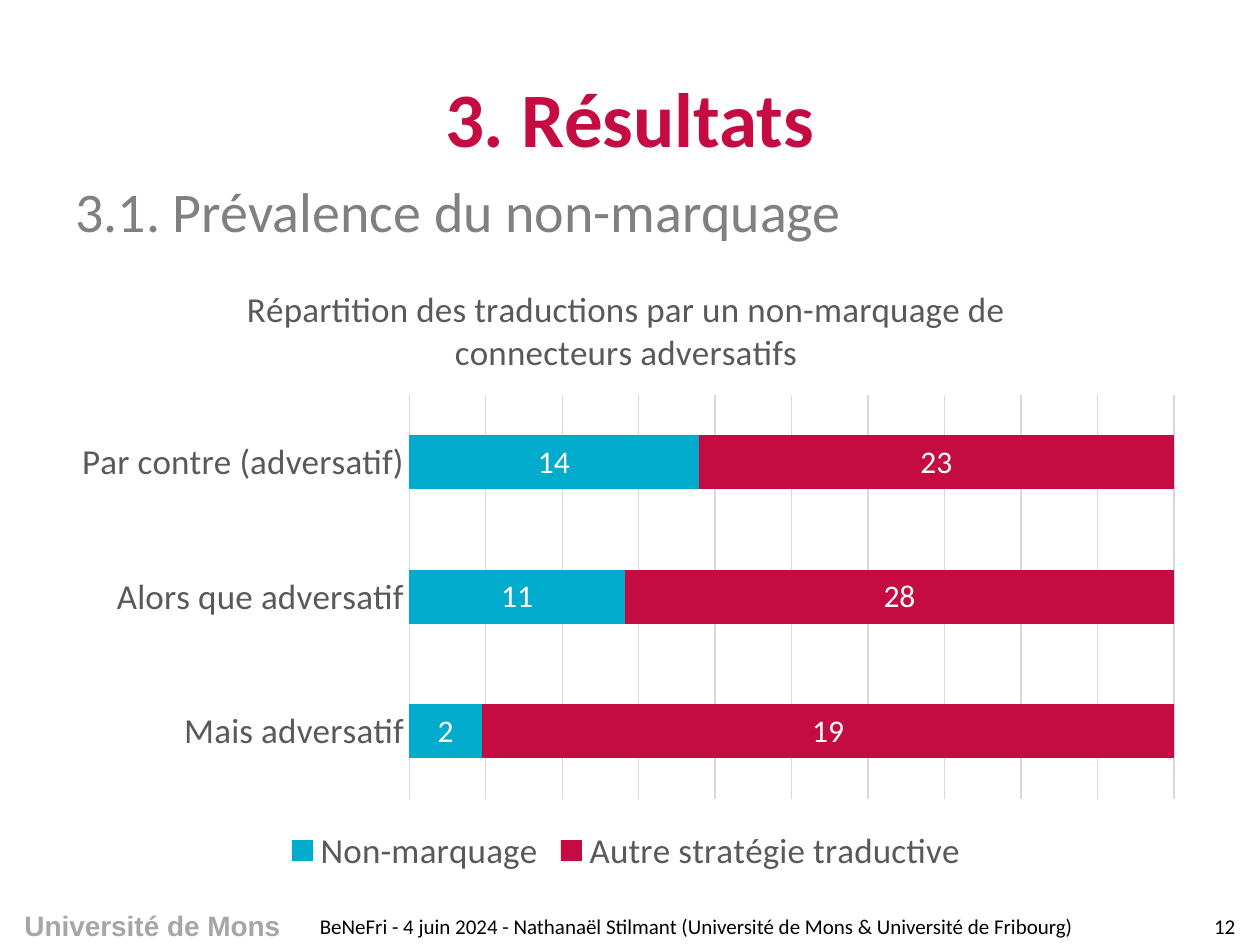
from dataclasses import dataclass

from lxml import etree
from pptx import Presentation
from pptx.chart.data import CategoryChartData
from pptx.dml.color import RGBColor
from pptx.enum import chart as ch, text as tx
from pptx.util import Inches, Pt

COLORS = {
    "crimson": "C40C42", "cyan": "00ABCC", "heading": "808080",
    "brand": "A6A6A6", "label": "595959", "grid": "D9D9D9",
    "black": "000000", "white": "FFFFFF",
}


@dataclass(frozen=True)
class Style:
    size: float
    color: str
    bold: bool = False
    family: str = "Calibri"


@dataclass(frozen=True)
class Label:
    content: str
    box: tuple[float, float, float, float]
    style: Style
    align: tx.PP_ALIGN
    anchor: tx.MSO_ANCHOR = tx.MSO_ANCHOR.MIDDLE


@dataclass(frozen=True)
class Series:
    name: str
    values: tuple[int, ...]
    color: str


FOOTER = Style(12, "black")
CHART_TEXT = Style(20, "label")
TITLE = Label("3. Résultats", (0.5, 0.3, 9, 1.25),
              Style(44, "crimson", bold=True), tx.PP_ALIGN.CENTER)
LABELS = [
    Label("Université de Mons", (-0.01, 7.16, 2.44, 0.37),
          Style(16, "brand", bold=True, family="Arial"),
          tx.PP_ALIGN.CENTER, tx.MSO_ANCHOR.TOP),
    Label("3.1. Prévalence du non-marquage", (0.5, 1.35, 9, 0.65),
          Style(32, "heading"), tx.PP_ALIGN.JUSTIFY, tx.MSO_ANCHOR.TOP),
    Label("12", (9.44, 7.2, 0.56, 0.3), FOOTER, tx.PP_ALIGN.CENTER),
    Label("BeNeFri - 4 juin 2024 - Nathanaël Stilmant "
          "(Université de Mons & Université de Fribourg)",
          (2.44, 7.2, 7, 0.3), FOOTER, tx.PP_ALIGN.LEFT),
]

CHART_BOX = (0.44, 2.05, 9.06, 4.93)
CHART_TITLE = "Répartition des traductions par un non-marquage de connecteurs adversatifs"
CONNECTORS = ("Mais adversatif", "Alors que adversatif", "Par contre (adversatif)")
STRATEGIES = [
    Series("Non-marquage", (2, 11, 14), "cyan"),
    Series("Autre stratégie traductive", (19, 28, 23), "crimson"),
]
# Fractions of the chart area
PLOT_LAYOUT = {"x": 0.31, "y": 0.22, "w": 0.67, "h": 0.65}


def rgb(name: str) -> RGBColor:
    return RGBColor.from_string(COLORS[name])


def apply_font(font, style: Style) -> None:
    font.name = style.family
    font.size = Pt(style.size)
    font.bold = style.bold
    font.color.rgb = rgb(style.color)


def fill_label(shape, label: Label) -> None:
    """Place a text shape and write its single run."""
    shape.left, shape.top, shape.width, shape.height = map(Inches, label.box)
    frame = shape.text_frame
    frame.word_wrap = True
    frame.auto_size = tx.MSO_AUTO_SIZE.NONE
    frame.vertical_anchor = label.anchor
    paragraph = frame.paragraphs[0]
    paragraph.alignment = label.align
    run = paragraph.add_run()
    run.text = label.content
    apply_font(run.font, label.style)


def set_plot_layout(chart) -> None:
    """Fix the inner plot area by fractions of the chart area."""
    area = chart._chartSpace.chart.plotArea
    namespace = "{%s}" % area.nsmap["c"]
    for old in area.findall(namespace + "layout"):
        area.remove(old)
    layout = etree.Element(namespace + "layout")
    manual = etree.SubElement(layout, namespace + "manualLayout")
    settings = {"layoutTarget": "inner", "xMode": "edge", "yMode": "edge", **PLOT_LAYOUT}
    for tag, value in settings.items():
        etree.SubElement(manual, namespace + tag).set("val", str(value))
    area.insert(0, layout)


def style_axes(chart) -> None:
    category = chart.category_axis
    category.major_tick_mark = category.minor_tick_mark = ch.XL_TICK_MARK.NONE
    apply_font(category.tick_labels.font, CHART_TEXT)
    value = chart.value_axis
    value.visible = False
    value.has_major_gridlines = True
    for line in (category.format.line, value.major_gridlines.format.line):
        line.color.rgb = rgb("grid")
        line.width = Pt(0.75)


def add_strategy_chart(slide) -> None:
    data = CategoryChartData()
    data.categories = CONNECTORS
    for strategy in STRATEGIES:
        data.add_series(strategy.name, strategy.values)
    chart = slide.shapes.add_chart(
        ch.XL_CHART_TYPE.BAR_STACKED_100, *map(Inches, CHART_BOX), data).chart
    apply_font(chart.font, Style(10, "black"))

    chart.has_title = True
    heading = chart.chart_title.text_frame.paragraphs[0].add_run()
    heading.text = CHART_TITLE
    apply_font(heading.font, CHART_TEXT)
    chart.chart_title.include_in_layout = False

    chart.has_legend = True
    chart.legend.position = ch.XL_LEGEND_POSITION.BOTTOM
    chart.legend.include_in_layout = False
    apply_font(chart.legend.font, CHART_TEXT)

    style_axes(chart)
    bars = chart.plots[0]
    bars.gap_width, bars.overlap = 150, 100
    bars.vary_by_categories = False
    for series, strategy in zip(bars.series, STRATEGIES):
        series.format.fill.solid()
        series.format.fill.fore_color.rgb = rgb(strategy.color)
        counts = series.data_labels
        counts.show_value = True
        counts.position = ch.XL_LABEL_POSITION.CENTER
        apply_font(counts.font, Style(18, "white"))
    set_plot_layout(chart)


def main() -> None:
    deck = Presentation()
    deck.slide_width, deck.slide_height = Inches(10), Inches(7.5)
    slide = deck.slides.add_slide(deck.slide_layouts.get_by_name("Title Only"))
    fill_label(slide.shapes.title, TITLE)
    for label in LABELS:
        fill_label(slide.shapes.add_textbox(*map(Inches, label.box)), label)
    add_strategy_chart(slide)
    deck.save("out.pptx")


if __name__ == "__main__":
    main()
